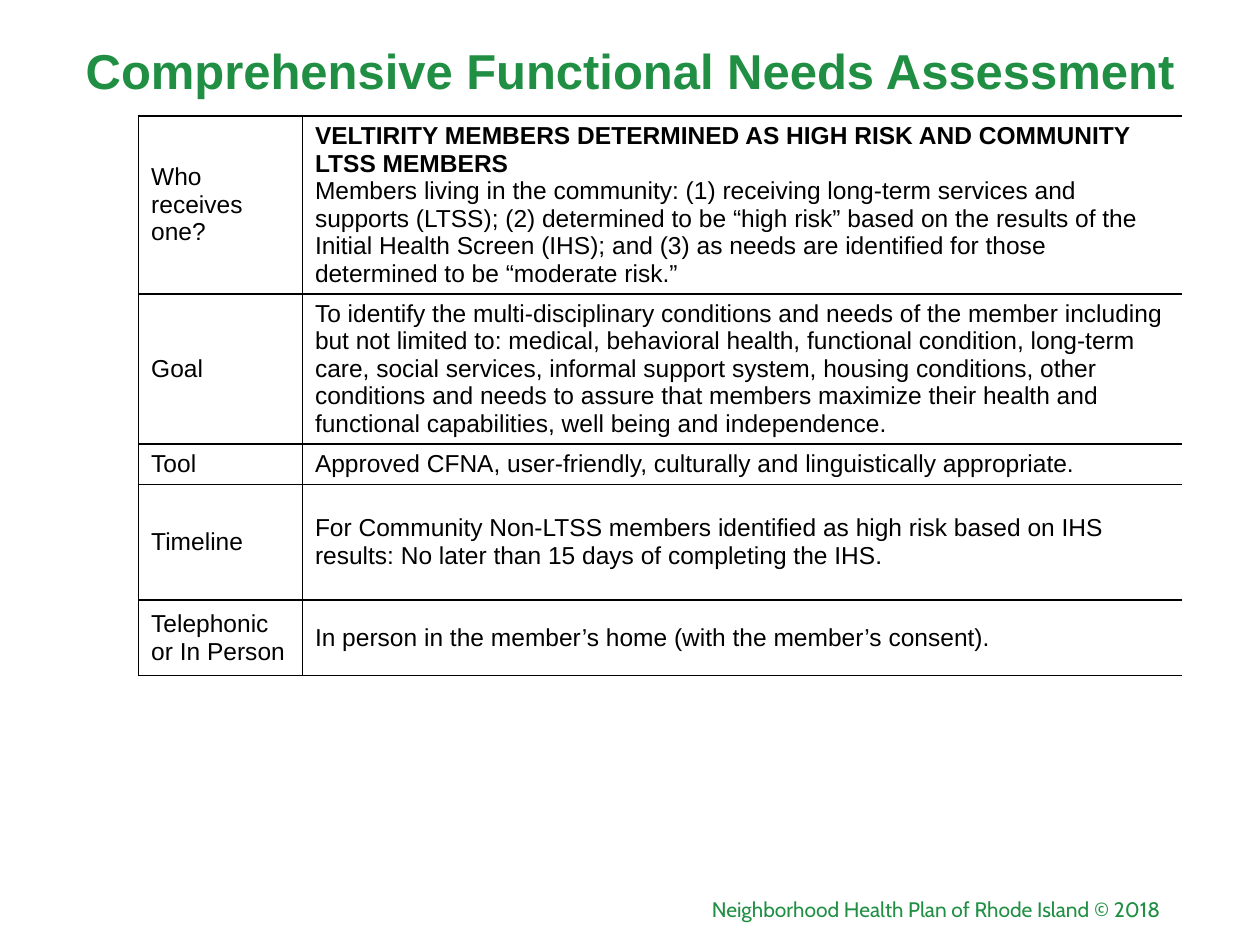
from lxml import etree
from pptx import Presentation
from pptx.dml.color import RGBColor
from pptx.enum.text import MSO_ANCHOR, PP_ALIGN
from pptx.oxml.ns import qn
from pptx.util import Inches, Pt

GREEN = RGBColor(0x20, 0x8F, 0x44)
BLACK = RGBColor(0x00, 0x00, 0x00)
MIDDLE = MSO_ANCHOR.MIDDLE
CENTER, RIGHT = PP_ALIGN.CENTER, PP_ALIGN.RIGHT

TITLE = "Comprehensive Functional Needs Assessment"
FOOTER = "Neighborhood Health Plan of Rhode Island © 2018"
COLUMN_WIDTHS = [1.3, 6.98]
# Row height, label, optional bold heading, description
ROWS = [
    (1.4, "Who receives one?",
     "VELTIRITY MEMBERS DETERMINED AS HIGH RISK AND COMMUNITY LTSS MEMBERS",
     "Members living in the community: (1) receiving long-term services and "
     "supports (LTSS); (2) determined to be “high risk” based on the results "
     "of the Initial Health Screen (IHS); and (3) as needs are identified for "
     "those determined to be “moderate risk.”"),
    (1.18, "Goal", None,
     "To identify the multi-disciplinary conditions and needs of the member "
     "including but not limited to: medical, behavioral health, functional "
     "condition, long-term care, social services, informal support system, "
     "housing conditions, other conditions and needs to assure that members "
     "maximize their health and functional capabilities, well being and "
     "independence."),
    (0.3, "Tool", None,
     "Approved CFNA, user-friendly, culturally and linguistically appropriate."),
    (0.92, "Timeline", None,
     "For Community Non-LTSS members identified as high risk based on IHS "
     "results: No later than 15 days of completing the IHS."),
    (0.6, "Telephonic or In Person", None,
     "In person in the member’s home (with the member’s consent)."),
]


class SlideBuilder:
    font = "Arial"
    body_size = 14
    border_width = 1

    def __init__(self, slide):
        self.slide = slide

    def format(self, paragraph, size, color, bold=False, font=None):
        for span in paragraph.runs:
            span.font.name = font or self.font
            span.font.size = Pt(size)
            span.font.bold = bold
            span.font.color.rgb = color

    def title(self, text, left, top, width, height):
        box = self.slide.shapes.title
        box.left, box.top = Inches(left), Inches(top)
        box.width, box.height = Inches(width), Inches(height)
        frame = box.text_frame
        frame.text = text
        frame.vertical_anchor = MIDDLE
        para = frame.paragraphs[0]
        para.alignment = CENTER
        para.line_spacing = 0.9
        self.format(para, 28, GREEN, bold=True)

    def footer(self, text, left, top, width, height):
        box = self.slide.shapes.add_textbox(
            Inches(left), Inches(top), Inches(width), Inches(height))
        frame = box.text_frame
        frame.word_wrap = True
        frame.vertical_anchor = MIDDLE
        frame.text = text
        para = frame.paragraphs[0]
        para.alignment = RIGHT
        self.format(para, 12, GREEN, font="Cabin")

    def borders(self, cell, drawn):
        """Draw the named sides (L, R, T, B) and clear the others."""
        properties = cell._tc.get_or_add_tcPr()
        for side in "LRTB":
            line = etree.SubElement(properties, qn(f"a:ln{side}"),
                                    w=str(Pt(self.border_width)))
            if side in drawn:
                fill = etree.SubElement(line, qn("a:solidFill"))
                etree.SubElement(fill, qn("a:srgbClr"), val=str(BLACK))
            else:
                etree.SubElement(line, qn("a:noFill"))

    def cell(self, cell, paragraphs, drawn):
        """Fill a cell; paragraphs are (text, bold) pairs."""
        self.borders(cell, drawn)
        cell.fill.background()
        cell.vertical_anchor = MIDDLE
        frame = cell.text_frame
        frame.text = "\n".join(text for text, _ in paragraphs)
        for para, (_, bold) in zip(frame.paragraphs, paragraphs):
            self.format(para, self.body_size, BLACK, bold)

    def table(self, rows, widths, left, top):
        height = sum(row[0] for row in rows)
        table = self.slide.shapes.add_table(
            len(rows), len(widths), Inches(left), Inches(top),
            Inches(sum(widths)), Inches(height)).table
        table.first_row = False
        table.horz_banding = False
        for column, width in zip(table.columns, widths):
            column.width = Inches(width)
        for index, (row_height, label, heading, description) in enumerate(rows):
            table.rows[index].height = Inches(row_height)
            self.cell(table.cell(index, 0), [(label, False)], "LRTB")
            paragraphs = [(heading, True)] if heading else []
            paragraphs.append((description, False))
            self.cell(table.cell(index, 1), paragraphs, "LTB")


def main():
    deck = Presentation()
    deck.slide_width, deck.slide_height = Inches(10), Inches(7.5)
    title_only = deck.slide_layouts[5]
    builder = SlideBuilder(deck.slides.add_slide(title_only))
    builder.title(TITLE, 0.5, -0.04, 9, 1.25)
    builder.table(ROWS, COLUMN_WIDTHS, 1.1, 0.92)
    builder.footer(FOOTER, 3.31, 7.08, 6, 0.27)
    deck.save("out.pptx")


if __name__ == "__main__":
    main()
